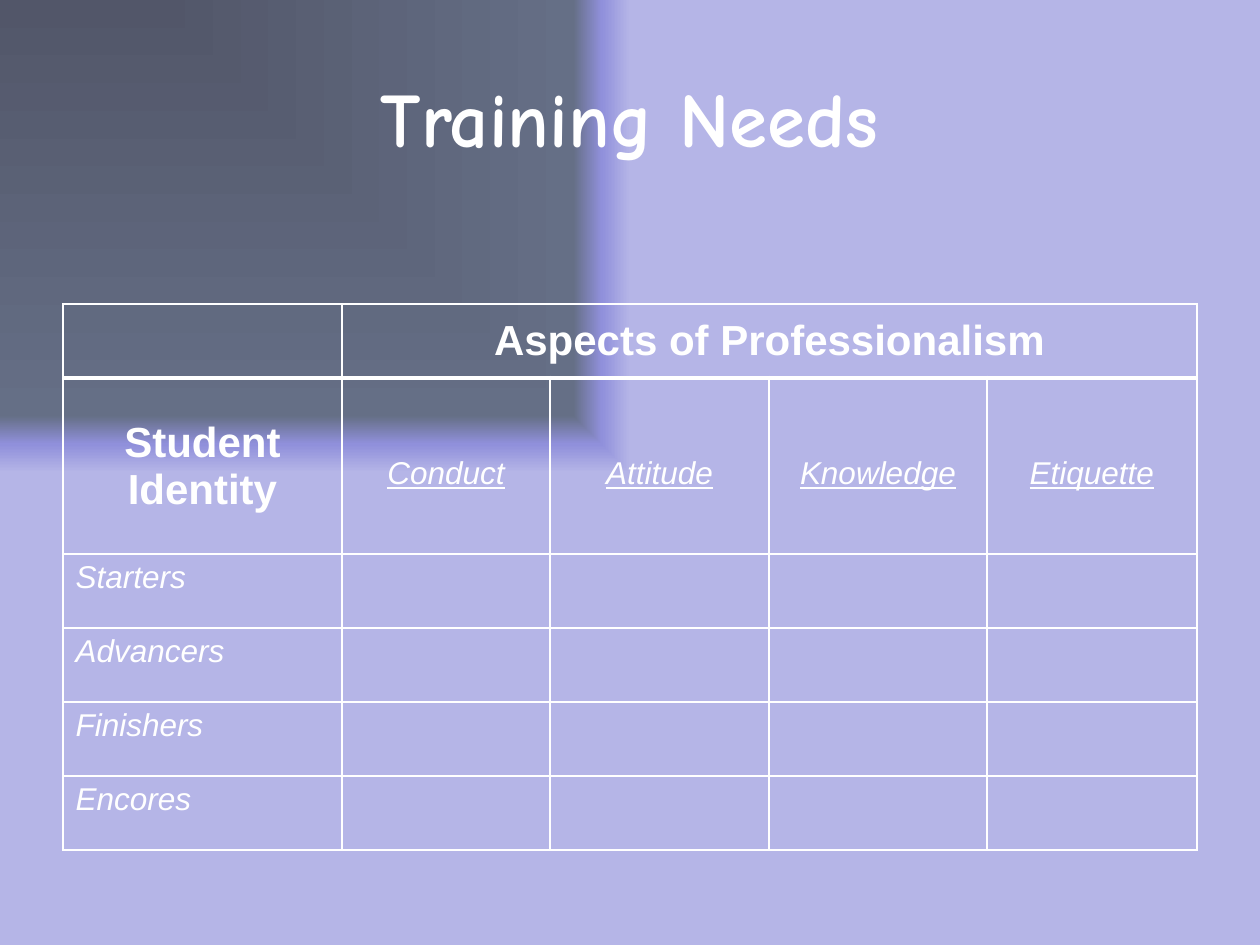
import pptx
import pptx.util
import pptx.dml.color
import pptx.enum.text
import pptx.oxml
import pptx.oxml.ns

WHITE = pptx.dml.color.RGBColor(0xFF, 0xFF, 0xFF)
SLATE = pptx.dml.color.RGBColor(0x52, 0x56, 0x69)
STEEL = pptx.dml.color.RGBColor(0x65, 0x6F, 0x86)
VIOLET = pptx.dml.color.RGBColor(0x90, 0x90, 0xDB)
LILAC = pptx.dml.color.RGBColor(0xB5, 0xB5, 0xE7)

STOPS = [(0, SLATE), (88, STEEL), (94, VIOLET), (100, LILAC)]
MIDDLE = pptx.enum.text.MSO_ANCHOR.MIDDLE
TOP = pptx.enum.text.MSO_ANCHOR.TOP
CENTER = pptx.enum.text.PP_ALIGN.CENTER
LEFT = pptx.enum.text.PP_ALIGN.LEFT
NS = pptx.oxml.ns.nsdecls("a")

TITLE = {"name": "Comic Neue", "size": pptx.util.Pt(44), "bold": True}
HEAD = {"name": "Arial", "size": pptx.util.Pt(24), "bold": True}
LABEL = {"name": "Arial", "size": pptx.util.Pt(18), "italic": True}
ASPECT = {**LABEL, "underline": True}

ASPECTS = ["Conduct", "Attitude", "Knowledge", "Etiquette"]
GROUPS = ["Starters", "Advancers", "Finishers", "Encores"]
COLS = [279, 208, 219, 218, 210]
ROWS = [74, 176] + [74] * len(GROUPS)


def px(count):
    return pptx.util.Emu(round(count * 914400 / 126))


class Deck:
    def __init__(self, wide, high):
        self.file = pptx.Presentation()
        self.file.slide_width = px(wide)
        self.file.slide_height = px(high)
        self.slide = self.file.slides.add_slide(self.file.slide_layouts[6])

    def ground(self, stops):
        self.slide.background.fill.gradient()
        old = self.slide.element.find(".//" + pptx.oxml.ns.qn("a:gradFill"))
        marks = "".join(
            f'<a:gs pos="{pos * 1000}"><a:srgbClr val="{tone}"/></a:gs>'
            for pos, tone in stops
        )
        new = pptx.oxml.parse_xml(
            f'<a:gradFill {NS} rotWithShape="0"><a:gsLst>{marks}</a:gsLst>'
            '<a:path path="rect"><a:fillToRect r="100000" b="100000"/></a:path>'
            "</a:gradFill>"
        )
        old.getparent().replace(old, new)

    def label(self, frame, words, style, align):
        para = frame.paragraphs[0]
        para.alignment = align
        run = para.add_run()
        run.text = words
        run.font.color.rgb = WHITE
        for key, value in style.items():
            setattr(run.font, key, value)

    def text(self, left, top, wide, high, words, style):
        box = self.slide.shapes.add_textbox(px(left), px(top), px(wide), px(high))
        frame = box.text_frame
        frame.word_wrap = True
        frame.vertical_anchor = MIDDLE
        self.label(frame, words, style, CENTER)

    def table(self, left, top, cols, rows):
        frame = self.slide.shapes.add_table(
            len(rows), len(cols), px(left), px(top), px(sum(cols)), px(sum(rows))
        )
        grid = frame.table
        grid.first_row = False
        grid.horz_banding = False
        for col, wide in zip(grid.columns, cols):
            col.width = px(wide)
        for row, high in zip(grid.rows, rows):
            row.height = px(high)
        for row in range(len(rows)):
            for col in range(len(cols)):
                cell = grid.cell(row, col)
                cell.fill.background()
                self.border(cell, 3 if row == 1 else 1, 3 if row == 0 else 1)
        return grid

    def border(self, cell, top, low):
        props = cell._tc.get_or_add_tcPr()
        for spot, (side, size) in enumerate(zip("LRTB", (1, 1, top, low))):
            line = pptx.oxml.parse_xml(
                f'<a:ln{side} {NS} w="{size * 12700}"><a:solidFill>'
                f'<a:srgbClr val="{WHITE}"/></a:solidFill></a:ln{side}>'
            )
            props.insert(spot, line)

    def cell(self, cell, words, style, align=CENTER, anchor=TOP, inset=6):
        cell.vertical_anchor = anchor
        cell.margin_top = px(inset)
        self.label(cell.text_frame, words, style, align)


def main():
    deck = Deck(1260, 945)
    deck.ground(STOPS)
    deck.text(63, 38, 1134, 157, "Training Needs", TITLE)
    grid = deck.table(63, 304, COLS, ROWS)
    grid.cell(0, 1).merge(grid.cell(0, len(ASPECTS)))
    deck.cell(grid.cell(0, 1), "Aspects of Professionalism", HEAD, anchor=MIDDLE)
    deck.cell(grid.cell(1, 0), "Student Identity", HEAD, inset=42)
    for col, name in enumerate(ASPECTS, 1):
        deck.cell(grid.cell(1, col), name, ASPECT, inset=78)
    for row, name in enumerate(GROUPS, 2):
        deck.cell(grid.cell(row, 0), name, LABEL, align=LEFT)
    deck.file.save("out.pptx")


if __name__ == "__main__":
    main()
